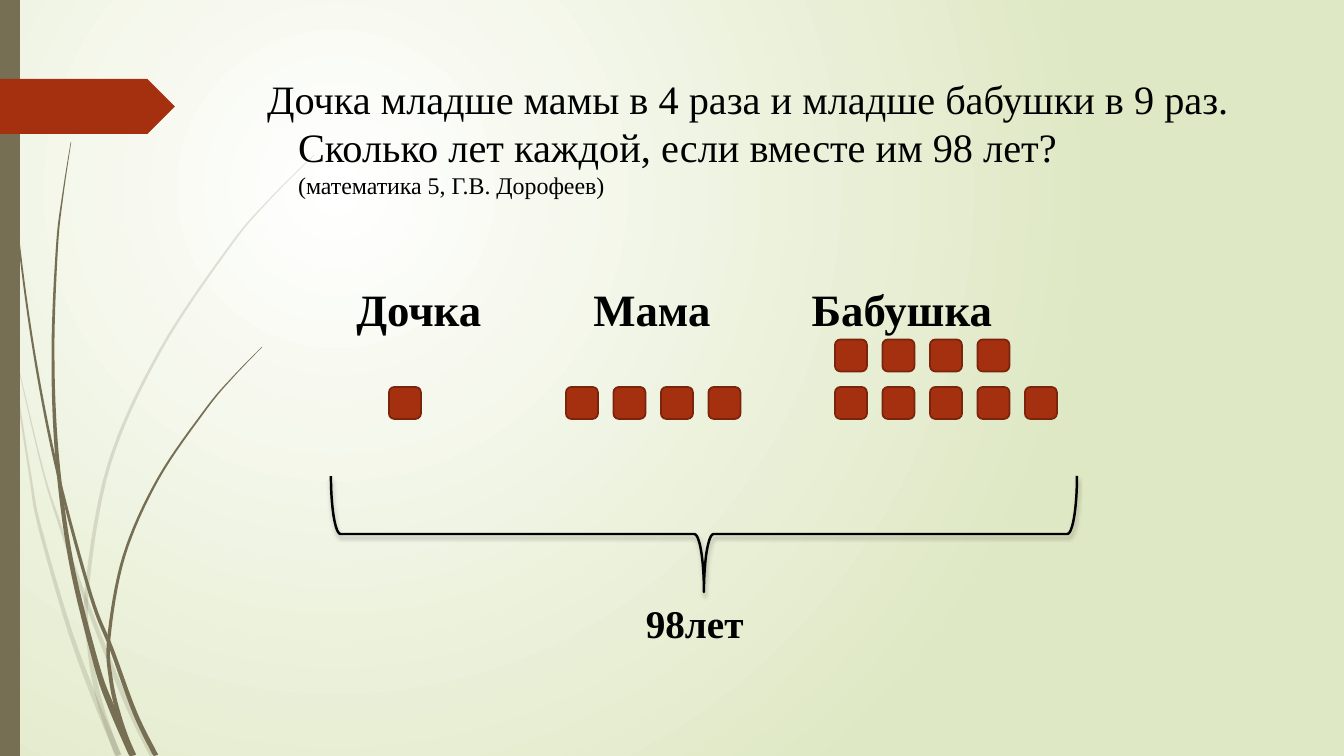
import math

import pptx
import pptx.dml.color
import pptx.enum.dml
import pptx.enum.shapes
import pptx.enum.text
import pptx.oxml
import pptx.oxml.ns
import pptx.util

EMU_PER_PX = 914400 / 100.8
SLIDE_WIDTH, SLIDE_HEIGHT = 1344, 756
FONT = "Times New Roman"
COLORS = {
    "white": "FFFFFF",
    "pale_green": "DFE8C4",
    "olive": "766F54",
    "brick": "A53010",
    "brick_line": "7A240C",
    "black": "000000",
}
SQUARE = 32
SQUARES_SPAN, SQUARES_GAPS = 190, 4

# Each stem: points from the tip down to the root, and the width at the root
PALE_STEMS = [
    ([(0, 292), (10, 348), (30, 474), (39, 524), (68, 625), (93, 694), (119, 756)], 6),
    ([(14, 348), (42, 467), (60, 525), (85, 598), (125, 699), (153, 756)], 6),
    ([(314, 155), (270, 199), (230, 246), (160, 351), (109, 465),
      (87, 589), (90, 651), (100, 703), (118, 756)], 6),
]
DARK_STEMS = [
    ([(4, 0), (8, 110), (18, 234), (35, 358), (58, 474),
      (91, 596), (112, 650), (135, 713), (156, 756)], 5),
    ([(71, 142), (63, 194), (57, 247), (53, 352), (57, 455),
      (71, 561), (96, 663), (111, 706), (133, 756)], 7),
    ([(262, 347), (233, 377), (206, 409), (158, 479), (124, 556),
      (109, 637), (111, 680), (120, 719), (133, 756)], 5),
]


def px(length):
    return pptx.util.Emu(round(length * EMU_PER_PX))


def rgb(name):
    return pptx.dml.color.RGBColor.from_string(COLORS[name])


def add_xml(parent, tag, content="", attributes=""):
    namespace = pptx.oxml.ns.nsdecls("a")
    parent.append(pptx.oxml.parse_xml(f"<a:{tag} {namespace} {attributes}>{content}</a:{tag}>"))


def write(paragraph, text, size, bold=False, color="black"):
    run = paragraph.add_run()
    run.text = text
    run.font.name = FONT
    run.font.size = pptx.util.Pt(size)
    run.font.bold = bold
    run.font.color.rgb = rgb(color)


def add_text_box(slide, box, text, size, align=pptx.enum.text.PP_ALIGN.LEFT):
    shape = slide.shapes.add_textbox(*map(px, box))
    shape.text_frame.word_wrap = True
    paragraph = shape.text_frame.paragraphs[0]
    paragraph.alignment = align
    write(paragraph, text, size, bold=True)
    return shape


def paint(shape, fill, line=None):
    shape.shadow.inherit = False
    shape.fill.solid()
    shape.fill.fore_color.rgb = rgb(fill)
    if line:
        shape.line.color.rgb = rgb(line)
        shape.line.width = pptx.util.Pt(1.25)
    else:
        shape.line.fill.background()


def add_preset(slide, kind, box, fill, line=None):
    shape = slide.shapes.add_shape(kind, *map(px, box))
    paint(shape, fill, line)
    return shape


def smooth_curve(points, steps=8):
    """Return points of a Catmull-Rom curve through the given points."""
    padded = [points[0], *points, points[-1]]
    curve = []
    for before, start, end, after in zip(padded, padded[1:], padded[2:], padded[3:]):
        for step in range(steps):
            t = step / steps
            curve.append(tuple(
                b + (c - a) * t / 2
                + (2 * a - 5 * b + 4 * c - d) * t ** 2 / 2
                + (3 * b - a - 3 * c + d) * t ** 3 / 2
                for a, b, c, d in zip(before, start, end, after)))
    return curve + [points[-1]]


def add_stem(slide, points, root_width, opacity=100):
    """Draw a stem that widens from a fine tip to its root."""
    curve = smooth_curve(points)
    left_edge, right_edge = [], []
    for index, (x, y) in enumerate(curve):
        x1, y1 = curve[max(index - 1, 0)]
        x2, y2 = curve[min(index + 1, len(curve) - 1)]
        length = math.hypot(x2 - x1, y2 - y1)
        half = (0.5 + (root_width - 0.5) * index / (len(curve) - 1)) / 2
        dx, dy = (y2 - y1) / length * half, (x1 - x2) / length * half
        left_edge.append((px(x - dx), px(min(y - dy, SLIDE_HEIGHT))))
        right_edge.append((px(x + dx), px(min(y + dy, SLIDE_HEIGHT))))
    outline = left_edge + right_edge[::-1]
    builder = slide.shapes.build_freeform(*outline[0])
    builder.add_line_segments(outline[1:], close=True)
    shape = builder.convert_to_shape()
    paint(shape, "olive")
    if opacity < 100:
        color = shape.element.spPr.find(".//" + pptx.oxml.ns.qn("a:srgbClr"))
        add_xml(color, "alpha", attributes=f'val="{opacity * 1000}"')


def add_background(slide):
    fill = slide.background.fill
    fill.gradient()
    for stop, color in zip(fill.gradient_stops, ("white", "pale_green")):
        stop.color.rgb = rgb(color)
    fill.gradient_stops[0].position = 0
    fill.gradient_stops[1].position = 1
    gradient = slide.element.find(".//" + pptx.oxml.ns.qn("a:gradFill"))
    gradient.remove(gradient.find(pptx.oxml.ns.qn("a:lin")))
    add_xml(gradient, "path", '<a:fillToRect l="50000" t="50000" r="100000" b="100000"/>',
            'path="circle"')


def add_left_decoration(slide):
    for points, root_width in PALE_STEMS:
        add_stem(slide, points, root_width, opacity=20)
    for points, root_width in DARK_STEMS:
        add_stem(slide, points, root_width)
    kinds = pptx.enum.shapes.MSO_SHAPE
    add_preset(slide, kinds.RECTANGLE, (0, 0, 20, SLIDE_HEIGHT), "olive")
    add_preset(slide, kinds.PENTAGON, (0, 79, 175, 55), "brick")


def add_problem(slide, box):
    title = slide.shapes.title
    title.left, title.top, title.width, title.height = map(px, box)
    title.element.getparent().append(title.element)
    frame = title.text_frame
    frame.word_wrap = True
    frame.auto_size = pptx.enum.text.MSO_AUTO_SIZE.NONE
    frame.vertical_anchor = pptx.enum.text.MSO_ANCHOR.TOP
    paragraph = frame.paragraphs[0]
    paragraph.alignment = pptx.enum.text.PP_ALIGN.LEFT
    paragraph.space_before = pptx.util.Pt(4)
    properties = paragraph._p.get_or_add_pPr()
    properties.set("marL", str(px(40)))
    properties.set("indent", str(px(-31)))
    write(paragraph, "Дочка младше мамы в 4 раза и младше бабушки в 9 раз. "
                     "Сколько лет каждой, если вместе им 98 лет?", 28.8)
    paragraph.add_line_break()
    write(paragraph, "(математика 5, Г.В. Дорофеев)", 17.1)


def add_family_member(slide, box, name, squares_left, rows):
    """Place a name in the box, and rows of squares that end at its bottom."""
    left, top, width, height = box
    label = add_text_box(slide, (left, top, width, 52), name, 32,
                         pptx.enum.text.PP_ALIGN.CENTER)
    frame = label.text_frame
    frame.margin_left = frame.margin_right = frame.margin_top = frame.margin_bottom = 0
    pitch = SQUARES_SPAN / SQUARES_GAPS
    for row, count in enumerate(reversed(rows)):
        for column in range(count):
            x = left + squares_left + column * pitch
            y = top + height - SQUARE - row * pitch
            add_preset(slide, pptx.enum.shapes.MSO_SHAPE.ROUNDED_RECTANGLE,
                       (x, y, SQUARE, SQUARE), "brick", "brick_line")


def add_total(slide, box):
    """Draw a brace across the top of the box and the sum below its point."""
    left, top, width, height = box
    depth = 116
    brace = slide.shapes.add_shape(
        pptx.enum.shapes.MSO_SHAPE.LEFT_BRACE,
        px(left + (width - depth) / 2), px(top + (depth - width) / 2), px(depth), px(width))
    brace.rotation = 270
    brace.fill.background()
    brace.line.color.rgb = rgb("black")
    brace.line.width = pptx.util.Pt(1.75)
    brace.shadow.inherit = False
    effects = brace.element.spPr.find(pptx.oxml.ns.qn("a:effectLst"))
    add_xml(effects, "outerShdw",
            f'<a:srgbClr val="{COLORS["black"]}"><a:alpha val="25000"/></a:srgbClr>',
            'blurRad="38100" dist="25400" dir="5400000" rotWithShape="0"')
    add_text_box(slide, (left + 305, top + depth + 2, 120, height - depth - 2), "98лет", 28)


def main():
    presentation = pptx.Presentation()
    presentation.slide_width, presentation.slide_height = px(SLIDE_WIDTH), px(SLIDE_HEIGHT)
    slide = presentation.slides.add_slide(presentation.slide_layouts[5])
    add_background(slide)
    add_left_decoration(slide)
    add_problem(slide, (248, 69, 1020, 141))
    add_family_member(slide, (339, 282, 160, 137), "Дочка", 50, [1])
    add_family_member(slide, (562, 282, 180, 137), "Мама", 4, [4])
    add_family_member(slide, (792, 282, 220, 137), "Бабушка", 43, [4, 5])
    add_total(slide, (331, 476, 746, 175))
    presentation.save("out.pptx")


if __name__ == "__main__":
    main()
